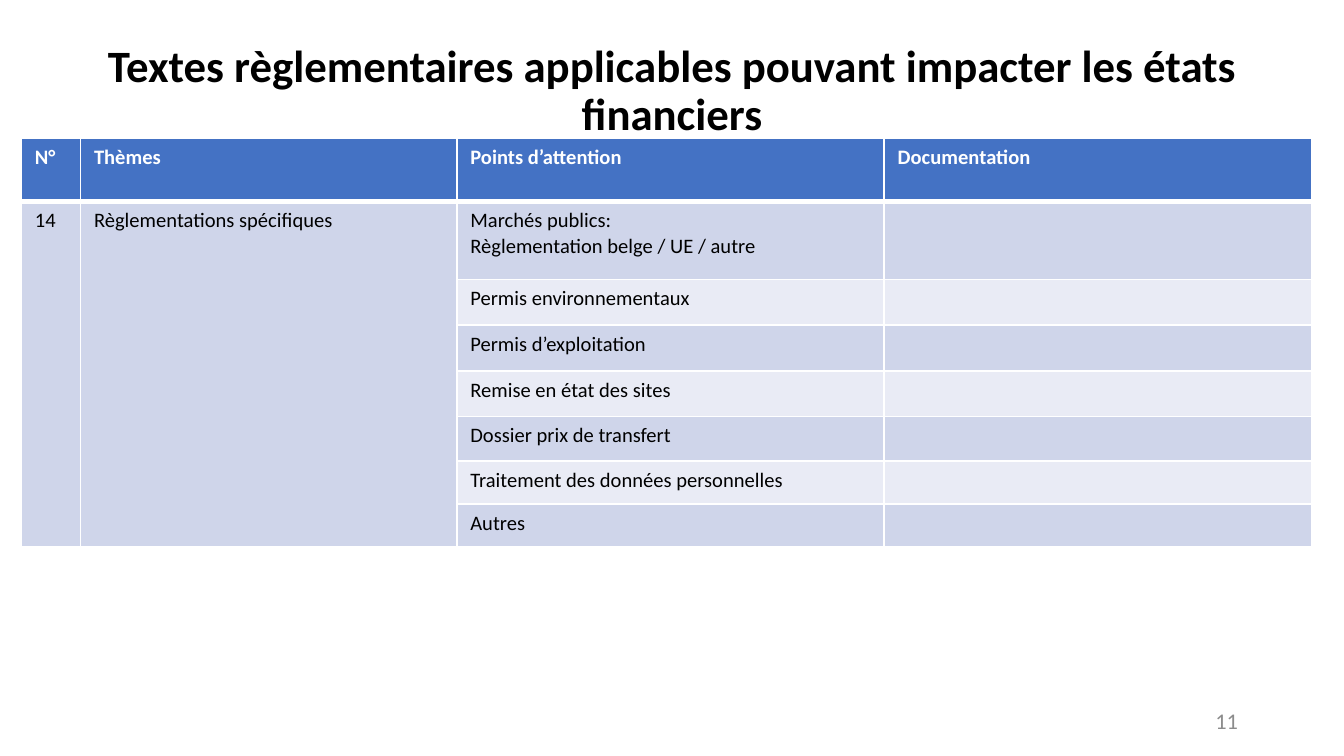
from lxml import etree
from pptx import Presentation
from pptx.dml.color import RGBColor
from pptx.enum import text
from pptx.oxml import ns
from pptx.util import Inches, Pt

WHITE = RGBColor(0xFF, 0xFF, 0xFF)
BLACK = RGBColor(0, 0, 0)
GREY = RGBColor(0x8C, 0x8C, 0x8C)
BLUE = RGBColor(0x44, 0x72, 0xC4)
BAND_DARK = RGBColor(0xCF, 0xD5, 0xEA)
BAND_LIGHT = RGBColor(0xE9, 0xEB, 0xF5)
FONT = "Calibri"

TITLE = "Textes règlementaires applicables pouvant impacter les états financiers"
HEADERS = ["N°", "Thèmes", "Points d’attention", "Documentation"]
NUMBER, THEME = "14", "Règlementations spécifiques"
POINTS = [
    "Marchés publics:\nRèglementation belge / UE / autre",
    "Permis environnementaux",
    "Permis d’exploitation",
    "Remise en état des sites",
    "Dossier prix de transfert",
    "Traitement des données personnelles",
    "Autres",
]
COLUMN_WIDTHS = [0.44, 2.8, 3.18, 3.18]
ROW_HEIGHTS = [0.47, 0.58, 0.34, 0.34, 0.34, 0.33, 0.32, 0.32]


def write(frame, content, size=11, color=BLACK, bold=False,
          align=text.PP_ALIGN.LEFT, spacing=None):
    for index, line in enumerate(content.split("\n")):
        para = frame.paragraphs[0] if index == 0 else frame.add_paragraph()
        para.alignment = align
        para.line_spacing = spacing
        if line:
            span = para.add_run()
            span.text = line
            span.font.name = FONT
            span.font.size = Pt(size)
            span.font.bold = bold
            span.font.color.rgb = color
        else:
            etree.SubElement(para._p, ns.qn("a:endParaRPr"), sz=str(size * 100))


def set_borders(cell, bottom=1, top=1):
    properties = cell._tc.get_or_add_tcPr()
    sides = {"lnL": 1, "lnR": 1, "lnT": top, "lnB": bottom}
    for index, (side, width) in enumerate(sides.items()):
        line = etree.Element(ns.qn(f"a:{side}"), w=str(Pt(width)))
        fill = etree.SubElement(line, ns.qn("a:solidFill"))
        etree.SubElement(fill, ns.qn("a:srgbClr"), val=str(WHITE))
        properties.insert(index, line)


def add_title(page, left, top, width, height):
    title = page.shapes.title
    title.left, title.top = Inches(left), Inches(top)
    title.width, title.height = Inches(width), Inches(height)
    frame = title.text_frame
    frame.word_wrap = True
    frame.auto_size = text.MSO_AUTO_SIZE.NONE
    frame.vertical_anchor = text.MSO_ANCHOR.MIDDLE
    write(frame, TITLE, size=24, bold=True,
          align=text.PP_ALIGN.CENTER, spacing=0.9)


def add_regulation_table(page, left, top):
    contents = [HEADERS] + [["", "", point, ""] for point in POINTS]
    contents[1][:2] = [NUMBER, THEME]
    table = page.shapes.add_table(
        len(contents), len(HEADERS), Inches(left), Inches(top),
        Inches(sum(COLUMN_WIDTHS)), Inches(sum(ROW_HEIGHTS))).table
    for column, width in zip(table.columns, COLUMN_WIDTHS):
        column.width = Inches(width)
    for row, height in zip(table.rows, ROW_HEIGHTS):
        row.height = Inches(height)
    for row_index, line in enumerate(contents):
        header = row_index == 0
        band = BAND_DARK if row_index % 2 else BAND_LIGHT
        for column_index, content in enumerate(line):
            cell = table.cell(row_index, column_index)
            cell.fill.solid()
            cell.fill.fore_color.rgb = BLUE if header else band
            set_borders(cell, bottom=3 if header else 1,
                        top=3 if row_index == 1 else 1)
            write(cell.text_frame, content, bold=header,
                  color=WHITE if header else BLACK)
    for column_index in range(2):
        table.cell(1, column_index).merge(table.cell(len(POINTS), column_index))


def add_page_number(page, left, top, width, height):
    box = page.shapes.add_textbox(
        Inches(left), Inches(top), Inches(width), Inches(height))
    frame = box.text_frame
    frame.word_wrap = True
    frame.vertical_anchor = text.MSO_ANCHOR.MIDDLE
    write(frame, "11", size=12, color=GREY, align=text.PP_ALIGN.RIGHT)


def main():
    deck = Presentation()
    deck.slide_width = Inches(10)
    deck.slide_height = deck.slide_width * 9 // 16
    page = deck.slides.add_slide(deck.slide_layouts[5])
    add_page_number(page, 7.06, 5.21, 2.25, 0.3)
    add_regulation_table(page, 0.16, 1.03)
    add_title(page, 0.69, 0.14, 8.62, 1.09)
    deck.save("out.pptx")


if __name__ == "__main__":
    main()
